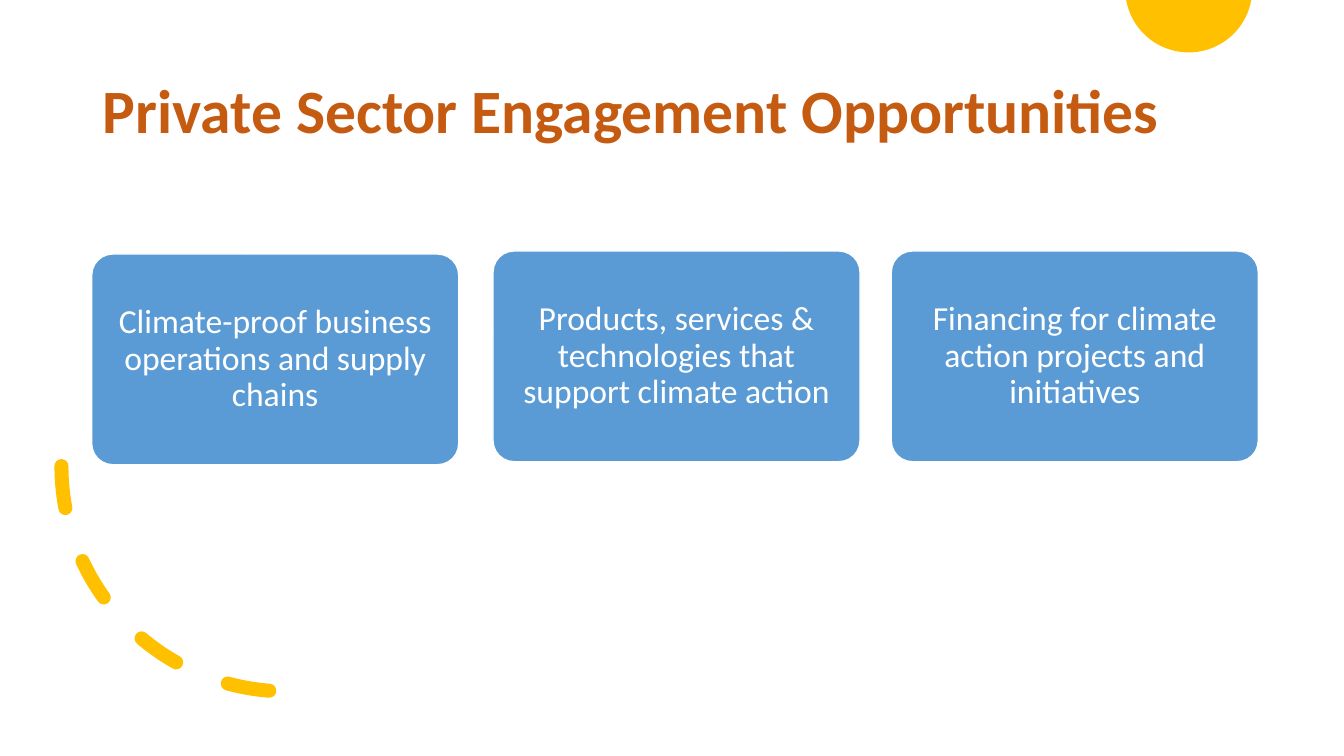
from dataclasses import dataclass
from math import asin, cos, pi, sin

from lxml import etree
from pptx import Presentation
from pptx.dml.color import RGBColor
from pptx.enum.dml import MSO_LINE
from pptx.enum.shapes import MSO_SHAPE
from pptx.enum.text import MSO_ANCHOR, MSO_AUTO_SIZE, PP_ALIGN
from pptx.util import Inches, Pt

ARC = MSO_SHAPE.ARC
ROUNDED = MSO_SHAPE.ROUNDED_RECTANGLE
DASH = MSO_LINE.DASH
MIDDLE = MSO_ANCHOR.MIDDLE
LEFT, CENTER = PP_ALIGN.LEFT, PP_ALIGN.CENTER
NO_AUTOFIT = MSO_AUTO_SIZE.NONE
TITLE_ONLY = 5

CARD_SIZE = (3.64, 2.09)
CARDS = [
    (0.91, 2.52, "Climate-proof business operations and supply chains"),
    (4.89, 2.49, "Products, services & technologies that support climate action"),
    (8.84, 2.49, "Financing for climate action projects and initiatives"),
]


@dataclass(frozen=True)
class Theme:
    font: str = "Calibri"
    title_size: int = 44
    card_size: int = 24
    title_color: RGBColor = RGBColor.from_string("C55A11")
    accent: RGBColor = RGBColor.from_string("FFC000")
    card_fill: RGBColor = RGBColor.from_string("5B9BD5")
    white: RGBColor = RGBColor.from_string("FFFFFF")


class SlideBuilder:
    """Draws styled elements on one slide."""

    def __init__(self, slide, theme):
        self.slide = slide
        self.theme = theme

    def set_text(self, text_frame, text, size, color, alignment, bold=False):
        text_frame.text = text
        text_frame.word_wrap = True
        text_frame.auto_size = NO_AUTOFIT
        text_frame.vertical_anchor = MIDDLE
        paragraph = text_frame.paragraphs[0]
        paragraph.alignment = alignment
        paragraph.line_spacing = 0.9
        font = paragraph.runs[0].font
        font.name, font.size, font.bold = self.theme.font, Pt(size), bold
        font.color.rgb = color

    def title(self, text, left, top, width, height):
        shape = self.slide.shapes.title
        shape.left, shape.top = Inches(left), Inches(top)
        shape.width, shape.height = Inches(width), Inches(height)
        self.set_text(shape.text_frame, text, self.theme.title_size,
                      self.theme.title_color, LEFT, bold=True)

    def cut_disc(self, center_x, center_y, radius, steps=48):
        start = asin(-center_y / radius)
        angles = [start + (pi - 2 * start) * step / steps for step in range(steps + 1)]
        points = [(Inches(center_x + radius * cos(angle)),
                   Inches(center_y + radius * sin(angle))) for angle in angles]
        builder = self.slide.shapes.build_freeform(*points[0])
        builder.add_line_segments(points[1:], close=True)
        shape = builder.convert_to_shape()
        shape.shadow.inherit = False
        shape.fill.solid()
        shape.fill.fore_color.rgb = self.theme.accent
        shape.line.fill.background()

    def dashed_arc(self, left, top, diameter, line_width):
        shape = self.slide.shapes.add_shape(
            ARC, Inches(left), Inches(top), Inches(diameter), Inches(diameter))
        shape.shadow.inherit = False
        shape.fill.background()
        shape.rotation = 90
        shape.element.spPr.xfrm.set("flipV", "1")
        line = shape.line
        line.color.rgb = self.theme.accent
        line.width = Pt(line_width)
        line.dash_style = DASH
        outline = shape.element.spPr.ln
        outline.set("cap", "rnd")
        etree.SubElement(outline, outline.tag.replace("}ln", "}round"))

    def card(self, text, left, top, width, height):
        shape = self.slide.shapes.add_shape(
            ROUNDED, Inches(left), Inches(top), Inches(width), Inches(height))
        shape.adjustments[0] = 0.1
        shape.shadow.inherit = False
        shape.fill.solid()
        shape.fill.fore_color.rgb = self.theme.card_fill
        shape.line.color.rgb = self.theme.white
        shape.line.width = Pt(1)
        text_frame = shape.text_frame
        text_frame.margin_left = text_frame.margin_right = Inches(0.15)
        self.set_text(text_frame, text, self.theme.card_size, self.theme.white, CENTER)


def main():
    presentation = Presentation()
    presentation.slide_width, presentation.slide_height = Inches(13.33), Inches(7.5)
    slide = presentation.slides.add_slide(presentation.slide_layouts[TITLE_ONLY])
    builder = SlideBuilder(slide, Theme())
    builder.cut_disc(11.79, -0.11, 0.63)
    builder.title("Private Sector Engagement Opportunities", 0.92, 0.4, 11.5, 1.45)
    builder.dashed_arc(0.61, 2.39, 4.47, 10)
    for left, top, text in CARDS:
        builder.card(text, left, top, *CARD_SIZE)
    presentation.save("out.pptx")


if __name__ == "__main__":
    main()
